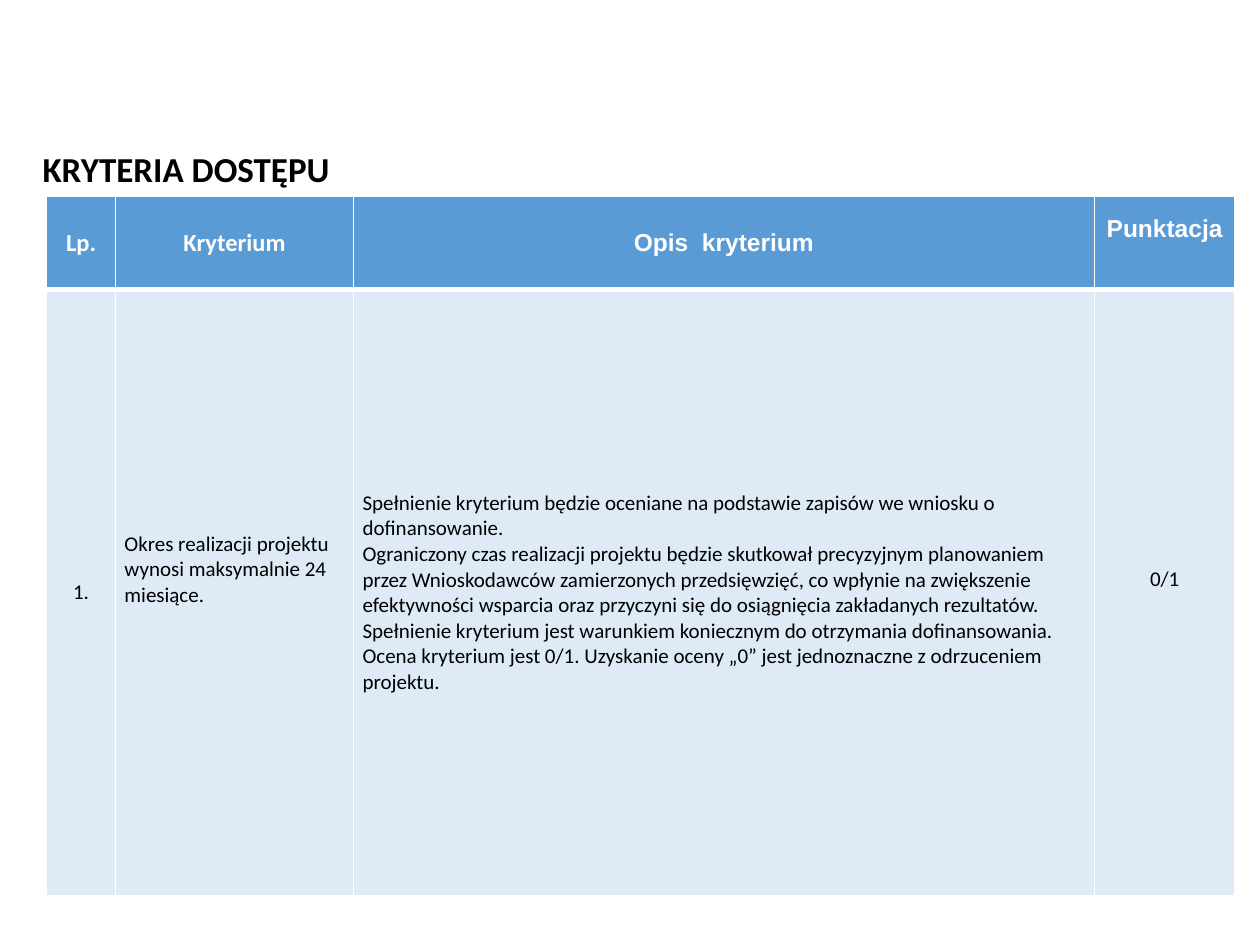
from lxml import etree
from pptx import Presentation
from pptx.dml.color import RGBColor
from pptx.enum.text import MSO_ANCHOR, PP_ALIGN
from pptx.oxml.ns import qn
from pptx.util import Cm, Pt

MIDDLE = MSO_ANCHOR.MIDDLE
LEFT, CENTER = PP_ALIGN.LEFT, PP_ALIGN.CENTER
COLORS = {"header": "5B9BD5", "body": "DEEBF7", "white": "FFFFFF", "black": "000000"}
TITLE = {"name": "Calibri", "size": Pt(20), "bold": True, "color": "black"}
HEADER = {"name": "Calibri", "size": Pt(14), "bold": True, "color": "white"}
HEADER_ARIAL = {**HEADER, "name": "Arial"}
BODY = {"name": "Calibri", "size": Pt(12), "bold": False, "color": "black"}
COLUMN_WIDTHS = (1.39, 4.8, 14.93, 2.84)
ROW_HEIGHTS = (1.88, 12.22)
HEADER_CELLS = (
    (["Lp."], HEADER, CENTER, 0.13),
    (["Kryterium"], HEADER, CENTER, 0.13),
    (["Opis  kryterium"], HEADER_ARIAL, CENTER, 0.13),
    (["Punktacja"], HEADER_ARIAL, CENTER, 0.7),
)
BODY_CELLS = (
    (["1."], BODY, CENTER, 0.13),
    (["Okres realizacji projektu wynosi maksymalnie 24 miesiące."], BODY, LEFT, 1.06),
    ([
        "Spełnienie kryterium będzie oceniane na podstawie zapisów we wniosku o "
        "dofinansowanie.",
        "Ograniczony czas realizacji projektu będzie skutkował precyzyjnym planowaniem "
        "przez Wnioskodawców zamierzonych przedsięwzięć, co wpłynie na zwiększenie "
        "efektywności wsparcia oraz przyczyni się do osiągnięcia zakładanych rezultatów.",
        "Spełnienie kryterium jest warunkiem koniecznym do otrzymania dofinansowania. "
        "Ocena kryterium jest 0/1. Uzyskanie oceny „0” jest jednoznaczne z odrzuceniem "
        "projektu.",
    ], BODY, LEFT, 0.13),
    (["0/1"], BODY, CENTER, 0.65),
)


def rgb(name):
    """Return the named palette colour."""
    return RGBColor.from_string(COLORS[name])


def write_text(tf, lines, fmt, align):
    """Fill a text frame with one formatted paragraph per line."""
    for i, line in enumerate(lines):
        p = tf.paragraphs[0] if i == 0 else tf.add_paragraph()
        p.alignment = align
        r = p.add_run()
        r.text = line
        for key, value in fmt.items():
            if key == "color":
                r.font.color.rgb = rgb(value)
            else:
                setattr(r.font, key, value)


def add_borders(cell, bottom):
    """Draw white cell borders with the given bottom width in points."""
    tc_pr = cell._tc.get_or_add_tcPr()
    for side, width in (("L", 1), ("R", 1), ("T", 1), ("B", bottom)):
        ln = etree.SubElement(tc_pr, qn(f"a:ln{side}"), w=str(Pt(width)))
        fill = etree.SubElement(ln, qn("a:solidFill"))
        etree.SubElement(fill, qn("a:srgbClr"), val=COLORS["white"])


def fill_row(table, index, cells, color, bottom):
    """Write and format one table row."""
    for cell, (lines, fmt, align, margin) in zip(table.rows[index].cells, cells):
        add_borders(cell, bottom)
        cell.fill.solid()
        cell.fill.fore_color.rgb = rgb(color)
        layout = {"vertical_anchor": MIDDLE, "margin_left": Cm(0.18),
                  "margin_right": Cm(0.18), "margin_bottom": Cm(margin)}
        for key, value in layout.items():
            setattr(cell, key, value)
        write_text(cell.text_frame, lines, fmt, align)


def add_title(s, text):
    """Add the slide heading."""
    tf = s.shapes.add_textbox(Cm(0.61), Cm(2.84), Cm(9.4), Cm(1.12)).text_frame
    tf.word_wrap = True
    tf.vertical_anchor = MIDDLE
    write_text(tf, [text], TITLE, LEFT)


def add_criteria_table(s):
    """Add the table of access criteria."""
    table = s.shapes.add_table(
        len(ROW_HEIGHTS), len(COLUMN_WIDTHS), Cm(0.94), Cm(3.96),
        Cm(sum(COLUMN_WIDTHS)), Cm(sum(ROW_HEIGHTS))).table
    for column, width in zip(table.columns, COLUMN_WIDTHS):
        column.width = Cm(width)
    for row, height in zip(table.rows, ROW_HEIGHTS):
        row.height = Cm(height)
    fill_row(table, 0, HEADER_CELLS, "header", 3)
    fill_row(table, 1, BODY_CELLS, "body", 1)


def main():
    """Build and save the slide."""
    prs = Presentation()
    prs.slide_width, prs.slide_height = Cm(25.4), Cm(19.05)
    s = prs.slides.add_slide(prs.slide_layouts[6])
    add_criteria_table(s)
    add_title(s, "KRYTERIA DOSTĘPU")
    prs.save("out.pptx")


if __name__ == "__main__":
    main()
